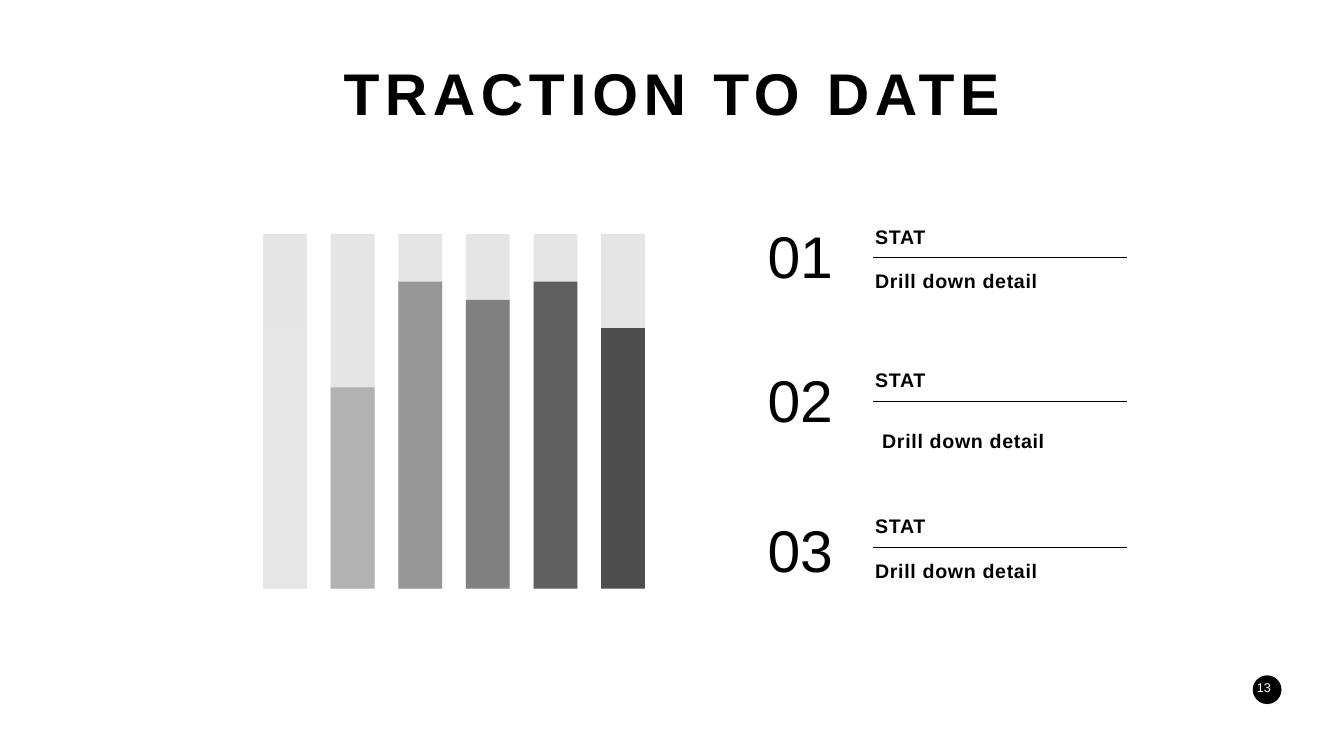
from pptx import Presentation
from pptx.dml.color import RGBColor as RGB
from pptx.enum.shapes import MSO_CONNECTOR as Line, MSO_SHAPE as Kind
from pptx.enum.text import MSO_ANCHOR as Anchor, PP_ALIGN as Align
from pptx.oxml.ns import qn
from pptx.util import Inches, Pt
from lxml.etree import SubElement

# Content
TITLE = "TRACTION TO DATE"
PAGE = "13"
BARS = [  # filled percent, colour
    (73.4, "E6E6E6"), (56.7, "B2B2B2"), (86.5, "969696"),
    (81.4, "808080"), (86.5, "5F5F5F"), (73.4, "4D4D4D"),
]
STATS = [  # rule height, then offsets from the rule: number; detail left, top
    dict(num="01", head="STAT", text="Drill down detail", rule=34.07, up=5.4, dx=0, dy=1.13),
    dict(num="02", head="STAT", text="Drill down detail", rule=53.07, up=5.33, dx=0.53, dy=3.4),
    dict(num="03", head="STAT", text="Drill down detail", rule=72.33, up=4.73, dx=0, dy=1.27),
]

THEME = dict(font="Arial", ink="000000", paper="FFFFFF", track="E5E5E5",
             big=84, body=28, small=18, rule=0.75)

# Layout, in percent of the slide's width and height
WIDE, HIGH = 26.66, 15
COL, STEP, BAR_W = 19.58, 5.03, 3.26
TOP, BAR_H = 30.93, 46.93
NUM_X, NUM_W = 56.6, 5.89
STAT_X, STAT_W = 64.74, 19.09
RULE_X, RULE_END = 64.97, 83.83
ROW_H, BIG_H, HEAD_UP = 3.8, 10.07, 4.73

deck = Presentation()
deck.slide_width, deck.slide_height = Inches(WIDE), Inches(HIGH)
slide = deck.slides.add_slide(deck.slide_layouts[6])


def place(x, y, w, h):
    return (Inches(WIDE * x / 100), Inches(HIGH * y / 100),
            Inches(WIDE * w / 100), Inches(HIGH * h / 100))


def write(text, box, size, color=THEME["ink"], bold=False, space=0,
          align=Align.LEFT, anchor=Anchor.TOP, wrap=True, pad=0.05, home=slide):
    frame = home.shapes.add_textbox(*place(*box)).text_frame
    frame.word_wrap, frame.vertical_anchor = wrap, anchor
    frame.margin_top = frame.margin_bottom = Inches(pad)
    para = frame.paragraphs[0]
    para.alignment = align
    run = para.add_run()
    run.text = text
    font = run.font
    font.name, font.size, font.bold = THEME["font"], Pt(size), bold
    font.color.rgb = RGB.from_string(color)
    if space:
        run._r.get_or_add_rPr().set("spc", str(space * 100))


def block(kind, box, color, home=slide):
    shape = home.shapes.add_shape(kind, *place(*box))
    shape.shadow.inherit = False
    shape.fill.solid()
    shape.fill.fore_color.rgb = RGB.from_string(color)
    shape.line.fill.background()


def rule(x, end, y, home):
    left, top, span, _ = place(x, y, end - x, 0)
    line = home.shapes.add_connector(Line.STRAIGHT, left, top, left + span, top)
    line.line.color.rgb = RGB.from_string(THEME["ink"])
    line.line.width = Pt(THEME["rule"])
    SubElement(line._element.spPr, qn("a:effectLst"))


# Page number
block(Kind.OVAL, (93.21, 89.33, 2.14, ROW_H), THEME["ink"])
write(PAGE, (92.39, 89.33, 3.3, 3.33), THEME["small"], color=THEME["paper"],
      align=Align.CENTER, pad=0.1)

# Title
write(TITLE, (24.94, 7.2, 50.11, BIG_H), THEME["big"], bold=True, space=8,
      align=Align.CENTER, wrap=False)

# Bars, each filled from the bottom of its track
bars = slide.shapes.add_group_shape()
for i, (share, color) in enumerate(BARS):
    x, tall = COL + i * STEP, BAR_H * share / 100
    block(Kind.RECTANGLE, (x, TOP, BAR_W, BAR_H), THEME["track"], bars)
    block(Kind.RECTANGLE, (x, TOP + BAR_H - tall, BAR_W, tall), color, bars)

# Numbered stats
for stat in STATS:
    y, dx = stat["rule"], stat["dx"]
    write(stat["num"], (NUM_X, y - stat["up"], NUM_W, BIG_H), THEME["big"],
          align=Align.CENTER, wrap=False)
    group = slide.shapes.add_group_shape()
    label = dict(size=THEME["body"], bold=True, space=1, home=group)
    write(stat["head"], (STAT_X, y - HEAD_UP, STAT_W, ROW_H),
          anchor=Anchor.MIDDLE, **label)
    write(stat["text"], (STAT_X + dx, y + stat["dy"], STAT_W - dx, ROW_H), **label)
    rule(RULE_X, RULE_END, y, group)

deck.save("out.pptx")
